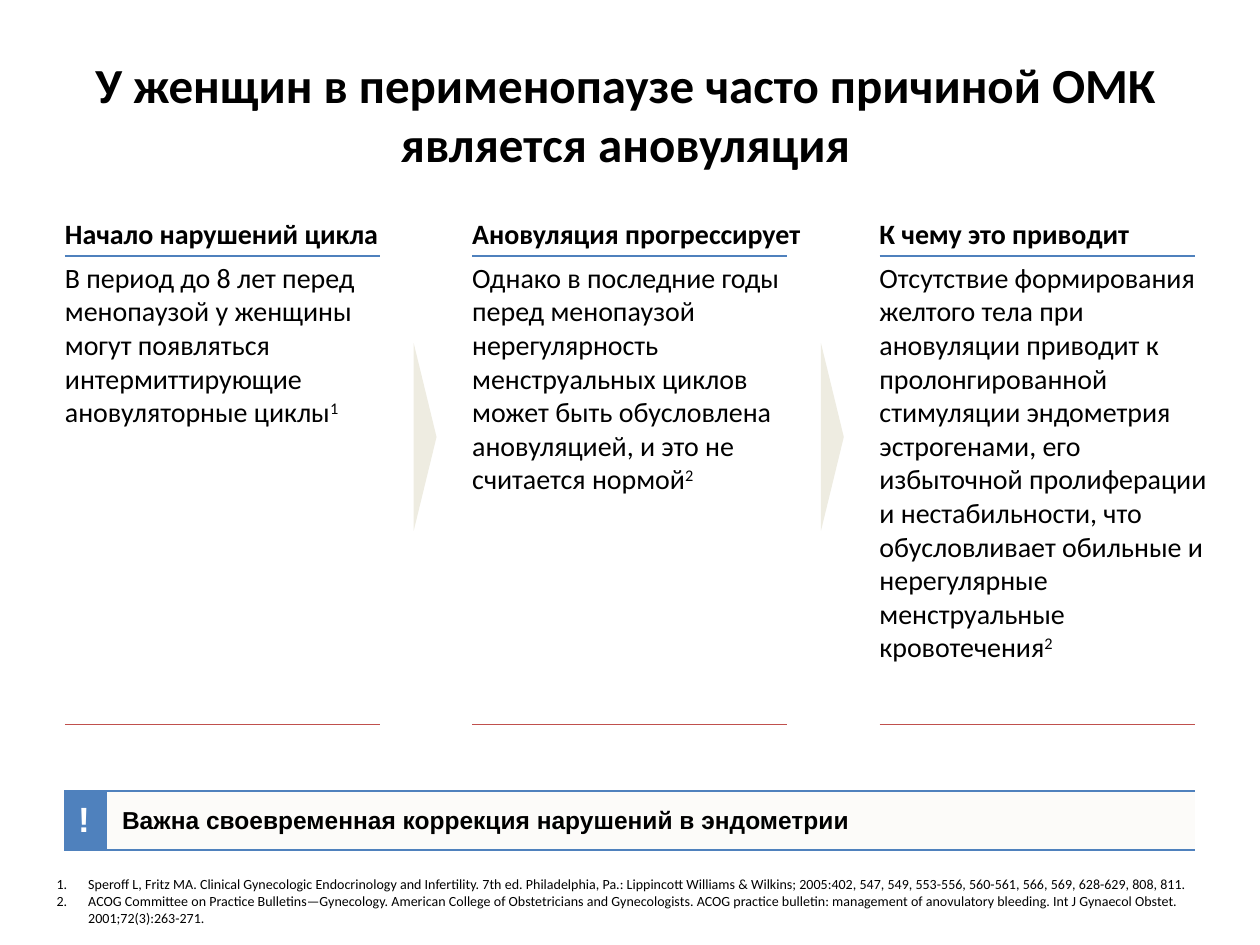
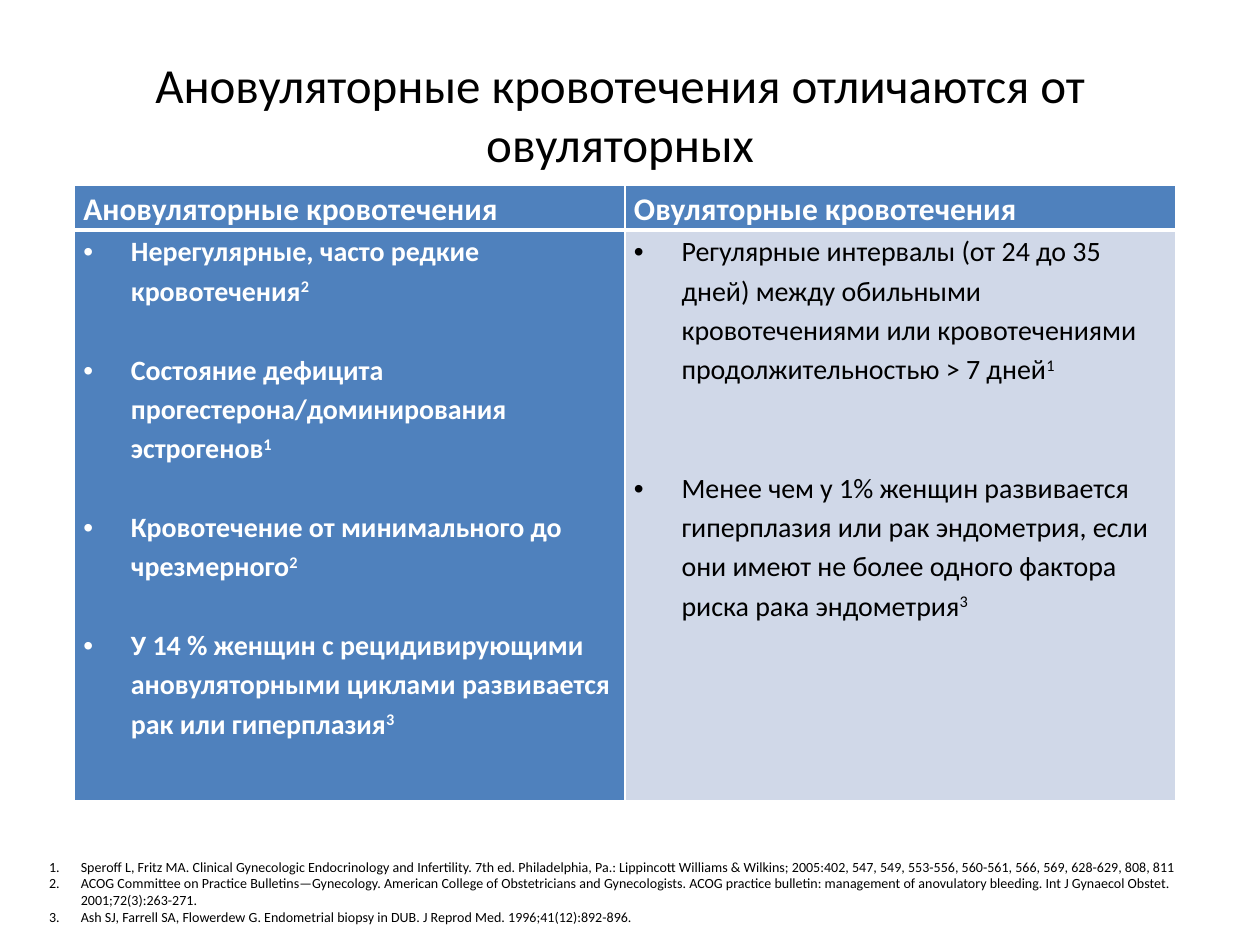
from dataclasses import dataclass

import pptx
import pptx.dml.color
import pptx.enum.shapes
import pptx.enum.text
import pptx.oxml
import pptx.oxml.ns
import pptx.util
from lxml import etree

Cm, Pt = pptx.util.Cm, pptx.util.Pt
ALIGN = pptx.enum.text.PP_ALIGN
ANCHOR = pptx.enum.text.MSO_ANCHOR
qn = pptx.oxml.ns.qn

COLORS = {
    "text": "000000", "white": "FFFFFF", "blue": "4F81BD", "red": "C0504D",
    "arrow": "EEECE1", "note": "FCFBF9", "pale": "D0D8E8",
}
BLANK_LINE = 22.5
REFERENCES = [
    "Speroff L, Fritz MA. Clinical Gynecologic Endocrinology and Infertility. 7th ed. Philadelphia, Pa.: "
    "Lippincott Williams & Wilkins; 2005:402, 547, 549, 553-556, 560-561, 566, 569, 628-629, 808, 811",
    "ACOG Committee on Practice Bulletins—Gynecology. American College of Obstetricians and Gynecologists. "
    "ACOG practice bulletin: management of anovulatory bleeding. Int J Gynaecol Obstet. 2001;72(3):263-271.",
    "Ash SJ, Farrell SA, Flowerdew G. Endometrial biopsy in DUB. J Reprod Med. 1996;41(12):892-896.",
]


@dataclass
class Stage:
    heading: str
    body: str
    heading_width: float
    body_width: float


@dataclass
class BleedingType:
    name: str
    features: list[str]
    gap: float
    fill: str
    color: str
    bold: bool


STAGES = [
    Stage("Начало нарушений цикла",
          "В период до 8 лет перед менопаузой у женщины могут появляться интермиттирующие "
          "ановуляторные циклы^1", 6.58, 6.32),
    Stage("Ановуляция прогрессирует",
          "Однако в последние годы перед менопаузой нерегулярность менструальных циклов может быть "
          "обусловлена ановуляцией, и это не считается нормой^2", 7.04, 6.32),
    Stage("К чему это приводит",
          "Отсутствие формирования желтого тела при ановуляции приводит к пролонгированной стимуляции "
          "эндометрия эстрогенами, его избыточной пролиферации и нестабильности, что обусловливает "
          "обильные и нерегулярные менструальные кровотечения^2", 6.32, 6.76),
]
BLEEDING_TYPES = [
    BleedingType("Ановуляторные кровотечения", [
        "Нерегулярные, часто редкие кровотечения^2",
        "Состояние дефицита прогестерона/доминирования эстрогенов^1",
        "Кровотечение от минимального до чрезмерного^2",
        "У 14 % женщин с рецидивирующими ановуляторными циклами развивается рак или гиперплазия^3",
    ], BLANK_LINE, "blue", "white", True),
    BleedingType("Овуляторные кровотечения", [
        "Регулярные интервалы (от 24 до 35 дней) между обильными кровотечениями или кровотечениями "
        "продолжительностью > 7 дней^1",
        "Менее чем у 1% женщин развивается гиперплазия или рак эндометрия, если они имеют не более "
        "одного фактора риска рака эндометрия^3",
    ], 2 * BLANK_LINE, "pale", "text", False),
]


def rgb(name: str):
    return pptx.dml.color.RGBColor.from_string(COLORS[name])


def add_bullet(p, indent: float, numbered: bool) -> None:
    pPr = p._p.get_or_add_pPr()
    pPr.set("marL", str(Cm(indent)))
    pPr.set("indent", str(-Cm(indent)))
    if numbered:
        etree.SubElement(pPr, qn("a:buAutoNum"), type="arabicPeriod")
    else:
        etree.SubElement(pPr, qn("a:buFont"), typeface="Arial")
        etree.SubElement(pPr, qn("a:buChar"), char="•")


def write(tf, *texts: str, size: float = 16, color: str = "text", bold: bool = False,
          font: str = "Calibri", align=ALIGN.LEFT, spacing: float = 1, gap: float = 0,
          indent: float = 0, numbered: bool = False) -> None:
    """Write one paragraph per text; a caret starts a superscript."""
    for i, text in enumerate(texts):
        p = tf.add_paragraph() if i else tf.paragraphs[0]
        if indent:
            add_bullet(p, indent, numbered)
        p.alignment = align
        p.line_spacing = spacing
        p.space_before = Pt(gap if i else 0)
        for j, part in enumerate(text.split("^")):
            r = p.add_run()
            r.text = part
            r.font.name, r.font.size, r.font.bold = font, Pt(size), bold
            r.font.color.rgb = rgb(color)
            if j:
                r._r.get_or_add_rPr().set("baseline", "30000")


def add_box(slide, x: float, y: float, w: float, h: float, margins=(0.25, 0.13, 0.25, 0.13),
            anchor=ANCHOR.TOP):
    tf = slide.shapes.add_textbox(Cm(x), Cm(y), Cm(w), Cm(h)).text_frame
    tf.word_wrap = True
    tf.vertical_anchor = anchor
    set_margins(tf, margins)
    return tf


def set_margins(target, margins) -> None:
    target.margin_left, target.margin_top, target.margin_right, target.margin_bottom = map(Cm, margins)


def add_title(slide, text: str, width: float, bold: bool = False) -> None:
    tf = add_box(slide, 1.3, 0.97, width, 2.64, anchor=ANCHOR.MIDDLE)
    write(tf, text, size=28, bold=bold, align=ALIGN.CENTER)


def add_references(slide, x: float, y: float, h: float, references: list[str]) -> None:
    write(add_box(slide, x, y, 23.8, h), *references, size=8, indent=0.64, numbered=True)


def add_rule(slide, x: float, y: float, color: str) -> None:
    line = slide.shapes.add_connector(pptx.enum.shapes.MSO_CONNECTOR.STRAIGHT,
                                      Cm(x), Cm(y), Cm(x + 6.35), Cm(y))
    line.line.color.rgb = rgb(color)
    line.line.width = Pt(0.75)
    etree.SubElement(line._element.spPr, qn("a:effectLst"))


def add_arrow(slide, center_x: float, center_y: float) -> None:
    w, h = 3.78, 0.46
    sp = slide.shapes.add_shape(pptx.enum.shapes.MSO_SHAPE.ISOSCELES_TRIANGLE,
                                Cm(center_x - w / 2), Cm(center_y - h / 2), Cm(w), Cm(h))
    sp.rotation = 90
    sp.shadow.inherit = False
    sp.fill.solid()
    sp.fill.fore_color.rgb = rgb("arrow")
    sp.line.fill.background()


def add_table(slide, x: float, y: float, widths: list[float], heights: list[float]):
    table = slide.shapes.add_table(len(heights), len(widths), Cm(x), Cm(y),
                                   Cm(sum(widths)), Cm(sum(heights))).table
    table.first_row = table.horz_banding = False
    for column, width in zip(table.columns, widths):
        column.width = Cm(width)
    for row, height in zip(table.rows, heights):
        row.height = Cm(height)
    return table


def style_cell(cell, fill: str, margins, border: str, widths: dict[str, float],
               anchor=ANCHOR.TOP) -> None:
    """Set fill, margins and borders; sides missing from widths get no line."""
    tcPr = cell._tc.get_or_add_tcPr()
    for side in "LRTB":
        ln = etree.SubElement(tcPr, qn(f"a:ln{side}"), w=str(Pt(widths.get(side, 0))))
        if side in widths:
            solid = etree.SubElement(ln, qn("a:solidFill"))
            etree.SubElement(solid, qn("a:srgbClr"), val=COLORS[border])
        else:
            etree.SubElement(ln, qn("a:noFill"))
    cell.fill.solid()
    cell.fill.fore_color.rgb = rgb(fill)
    cell.vertical_anchor = anchor
    set_margins(cell, margins)


def build_causes(slide) -> None:
    add_title(slide, "У женщин в перименопаузе часто причиной ОМК является ановуляция", 22.61, bold=True)
    pitch = 8.21
    for i, stage in enumerate(STAGES):
        x = 1.31 + i * pitch
        write(add_box(slide, x, 4.95, stage.body_width, 9.65, (0, 0.3, 0, 0)), stage.body)
        write(add_box(slide, x, 4.37, stage.heading_width, 0.76, (0, 0, 0, 0.1)),
              stage.heading, bold=True)
        add_rule(slide, x, 5.16, "blue")
        add_rule(slide, x, 14.6, "red")
        if i:
            add_arrow(slide, x - 0.95, 8.81)

    note = add_table(slide, 1.3, 15.95, [0.86, 21.92], [1.19])
    mark, message = note.cell(0, 0), note.cell(0, 1)
    for cell, fill, left in ((mark, "blue", 0.1), (message, "note", 0.3)):
        style_cell(cell, fill, (left, 0, 0.18, 0), "blue", {"T": 1.5, "B": 1.5}, ANCHOR.MIDDLE)
    write(mark.text_frame, "!", size=20, font="Arial", color="white", bold=True, align=ALIGN.CENTER)
    write(message.text_frame, "Важна своевременная коррекция нарушений в эндометрии",
          size=14, font="Arial", bold=True)
    add_references(slide, 0.89, 17.53, 1.4, [REFERENCES[0] + ".", REFERENCES[1]])


def build_comparison(slide) -> None:
    add_title(slide, "Ановуляторные кровотечения отличаются от овуляторных", 22.4)
    table = add_table(slide, 1.5, 3.73, [11.1, 11.1], [0.91, 11.5])
    margins = (0.18, 0, 0.18, 0)
    for i, kind in enumerate(BLEEDING_TYPES):
        header, body = table.cell(0, i), table.cell(1, i)
        style_cell(header, "blue", margins, "white", {"L": 1, "R": 1, "T": 1, "B": 3})
        style_cell(body, kind.fill, margins, "white", {"L": 1, "R": 1, "T": 3, "B": 1})
        write(header.text_frame, kind.name, size=18, color="white", bold=True, spacing=1.15)
        write(body.text_frame, *kind.features, color=kind.color, bold=kind.bold,
              spacing=1.15, gap=kind.gap, indent=0.96)
    add_references(slide, 0.74, 17.17, 1.63, REFERENCES)


def main() -> None:
    prs = pptx.Presentation()
    prs.slide_width, prs.slide_height = Cm(25.4), Cm(19.05)
    for build in (build_causes, build_comparison):
        build(prs.slides.add_slide(prs.slide_layouts[6]))
    prs.save("out.pptx")


if __name__ == "__main__":
    main()
